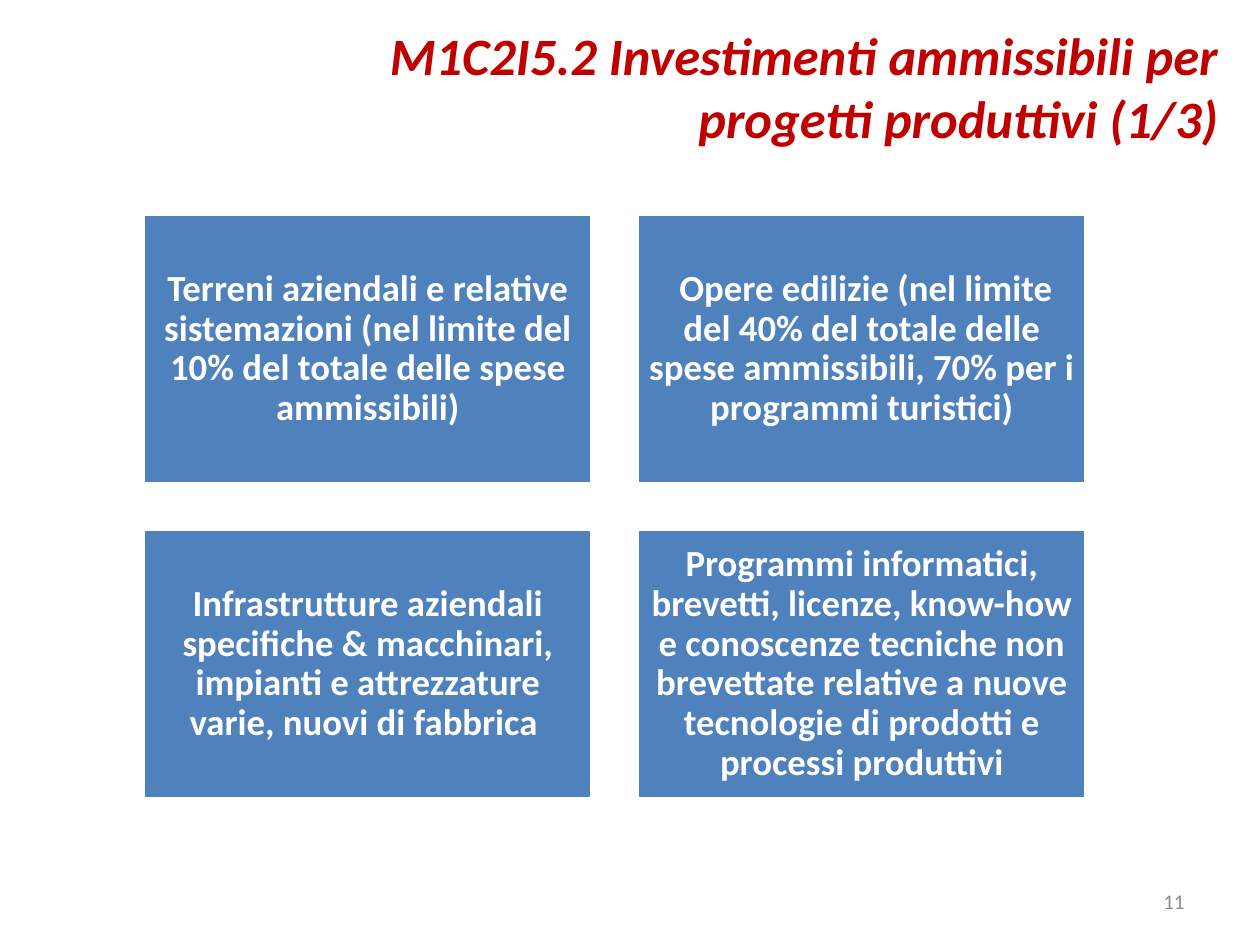
from pptx import Presentation
from pptx.dml.color import RGBColor
from pptx.enum.shapes import MSO_SHAPE
from pptx.enum.text import MSO_ANCHOR, PP_ALIGN
from pptx.util import Inches, Pt

BLUE = RGBColor(0x4F, 0x81, 0xBD)
WHITE = RGBColor(0xFF, 0xFF, 0xFF)
RED = RGBColor(0xC0, 0x00, 0x00)
GRAY = RGBColor(0x8C, 0x8C, 0x8C)

INVESTMENTS = [
    "Terreni aziendali e relative sistemazioni (nel limite del 10% del totale delle spese ammissibili)",
    " Opere edilizie (nel limite del 40% del totale delle spese ammissibili, 70% per i programmi turistici)",
    "Infrastrutture aziendali specifiche & macchinari, impianti e attrezzature varie, nuovi di fabbrica ",
    "Programmi informatici, brevetti, licenze, know-how e conoscenze tecniche non brevettate "
    "relative a nuove tecnologie di prodotti e processi produttivi",
]


def write_text(sp, text, color, align, anchor, **formats):
    tf = sp.text_frame
    tf.word_wrap = True
    tf.vertical_anchor = anchor
    p = tf.paragraphs[0]
    p.alignment = align
    r = p.add_run()
    r.text = text
    r.font.color.rgb = color
    for name, value in {"name": "Calibri", **formats}.items():
        setattr(r.font, name, value)
    return tf


def add_label(s, box, text, color, anchor, **formats):
    sp = s.shapes.add_textbox(*map(Inches, box))
    write_text(sp, text, color, PP_ALIGN.RIGHT, anchor, **formats)


def add_card(s, box, text):
    sp = s.shapes.add_shape(MSO_SHAPE.RECTANGLE, *map(Inches, box))
    sp.shadow.inherit = False
    sp.fill.solid()
    sp.fill.fore_color.rgb = BLUE
    sp.line.color.rgb = WHITE
    sp.line.width = Pt(2)
    tf = write_text(sp, text, WHITE, PP_ALIGN.CENTER, MSO_ANCHOR.MIDDLE,
                    size=Pt(21), bold=True)
    tf.paragraphs[0].line_spacing = 0.9
    for side in ("left", "top", "right", "bottom"):
        setattr(tf, f"margin_{side}", Inches(0.09))


def add_card_grid(s, box, texts, cols=2, gap=0.36):
    left, top, width, height = box
    rows = len(texts) // cols
    w = (width - gap * (cols - 1)) / cols
    h = (height - gap * (rows - 1)) / rows
    for i, text in enumerate(texts):
        row, col = divmod(i, cols)
        add_card(s, (left + col * (w + gap), top + row * (h + gap), w, h), text)


def main():
    prs = Presentation()
    prs.slide_width, prs.slide_height = Inches(10), Inches(7.5)
    s = prs.slides.add_slide(prs.slide_layouts[6])
    add_card_grid(s, (1.14, 1.7, 7.48, 4.64), INVESTMENTS)
    add_label(s, (2.01, 0.13, 7.76, 1.11),
              "M1C2I5.2 Investimenti ammissibili per progetti produttivi (1/3)",
              RED, MSO_ANCHOR.TOP, size=Pt(30), bold=True, italic=True)
    add_label(s, (7.17, 6.95, 2.33, 0.4), "11", GRAY, MSO_ANCHOR.MIDDLE, size=Pt(12))
    prs.save("out.pptx")


if __name__ == "__main__":
    main()
